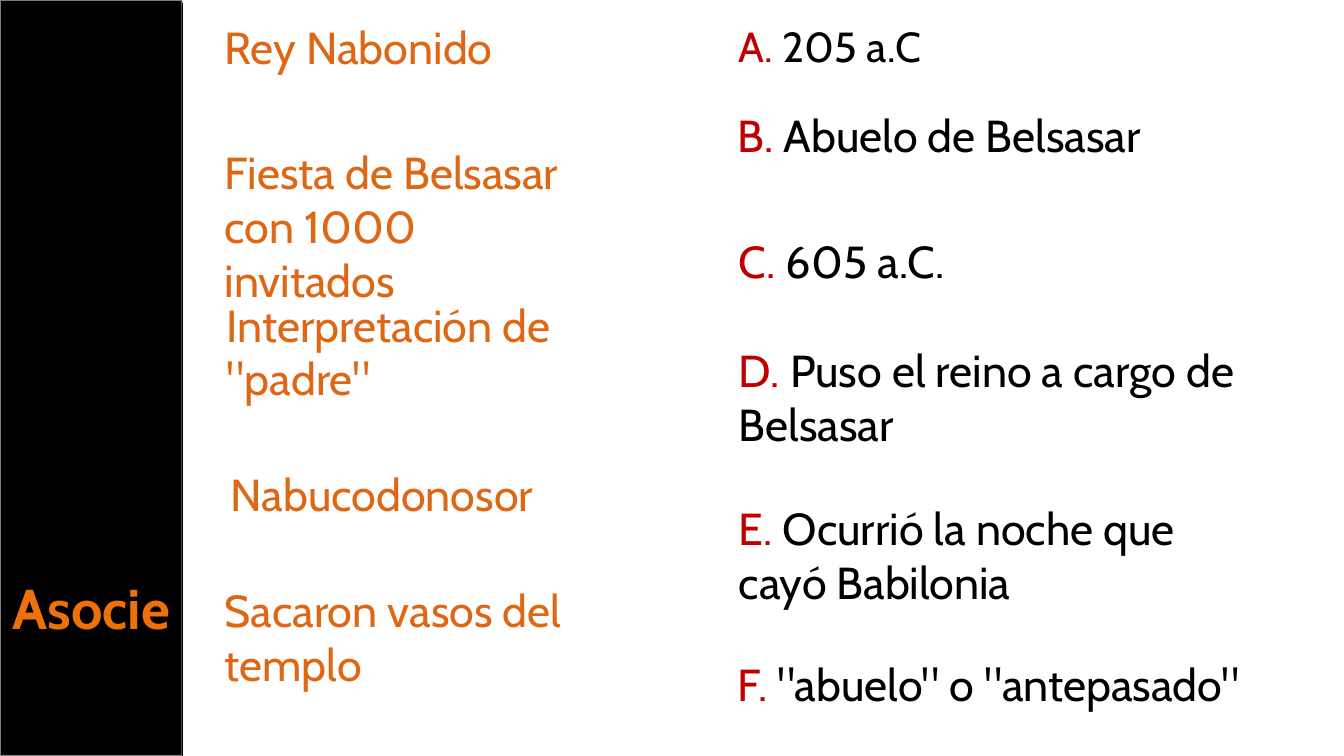
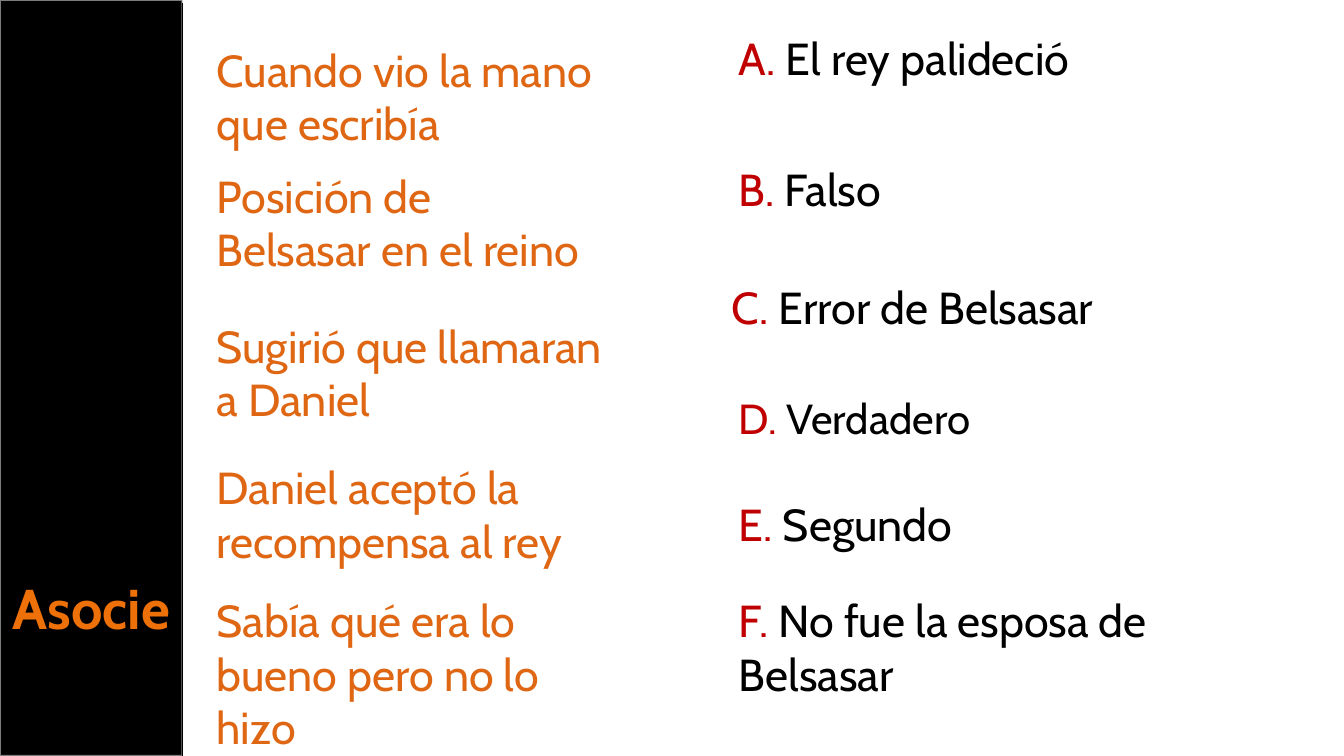
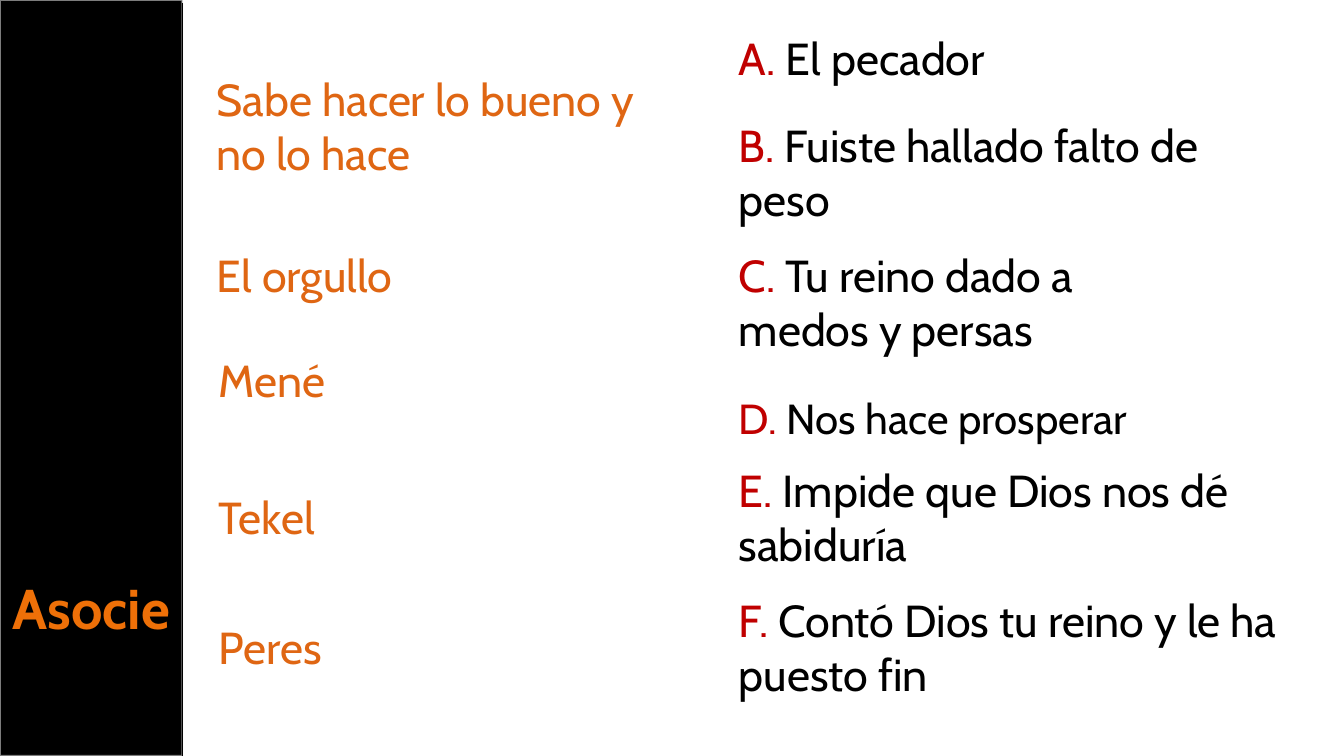
from dataclasses import dataclass

from lxml import etree
from pptx import Presentation
from pptx.dml.color import RGBColor
from pptx.enum.shapes import MSO_CONNECTOR, MSO_SHAPE
from pptx.enum.text import MSO_AUTO_SIZE, PP_ALIGN
from pptx.oxml.ns import qn
from pptx.util import Inches, Pt


@dataclass(frozen=True)
class Theme:
    font: str = "Cabin"
    band: RGBColor = RGBColor(0x00, 0x00, 0x00)
    band_edge: RGBColor = RGBColor(0xF9, 0xF9, 0xF9)
    title: RGBColor = RGBColor(0xEE, 0x70, 0x08)
    prompt: RGBColor = RGBColor(0xDF, 0x66, 0x13)
    letter: RGBColor = RGBColor(0xC0, 0x00, 0x00)
    answer: RGBColor = RGBColor(0x00, 0x00, 0x00)
    title_size: int = 40
    body_size: int = 32
    small_size: int = 30
    line_spacing: float = 1.22


@dataclass(frozen=True)
class Entry:
    """One text of a column; lines is the number of lines its box is sized for."""
    text: str
    left: float
    top: float
    width: float
    lines: int = 1
    size: int = 32


THEME = Theme()
PAGE_WIDTH, PAGE_HEIGHT = 13.33, 7.5
BAND_WIDTH = 1.81
SMALL = THEME.small_size

# Each exercise: prompts on the left, answers (lettered from A) on the right.
EXERCISES = [
    (
        [
            Entry("Rey Nabonido", 2.13, 0.15, 4.59),
            Entry("Fiesta de Belsasar con 1000 invitados", 2.13, 1.39, 3.84, 2),
            Entry('Interpretación de "padre"', 2.15, 2.9, 4.13, 2),
            Entry("Nabucodonosor", 2.19, 4.58, 4.06),
            Entry("Sacaron vasos del templo", 2.13, 5.73, 4.26, 2),
        ],
        [
            Entry("205 a.C", 7.23, 0.15, 4.18, size=SMALL),
            Entry("Abuelo de Belsasar", 7.22, 1.02, 4.92),
            Entry("605 a.C.", 7.23, 2.27, 4.7),
            Entry("Puso el reino a cargo de Belsasar", 7.23, 3.35, 5.51, 2),
            Entry("Ocurrió la noche que cayó Babilonia", 7.23, 4.92, 4.53, 2),
            Entry('"abuelo" o "antepasado"', 7.22, 6.47, 5.59),
        ],
    ),
    (
        [
            Entry("Cuando vio la mano que escribía", 2.05, 0.37, 4.59, 2),
            Entry("Posición de Belsasar en el reino", 2.05, 1.62, 3.84, 2),
            Entry("Sugirió que llamaran a Daniel", 2.05, 3.11, 4.13, 2),
            Entry("Daniel aceptó la recompensa al rey", 2.05, 4.51, 4.39, 2),
            Entry("Sabía qué era lo bueno pero no lo hizo", 2.05, 5.83, 4.26, 2),
        ],
        [
            Entry("El rey palideció", 7.23, 0.26, 3.51),
            Entry("Falso", 7.23, 1.55, 1.89),
            Entry("Error de Belsasar", 7.16, 2.73, 3.91),
            Entry("Verdadero", 7.23, 3.84, 4.18, size=SMALL),
            Entry("Segundo", 7.23, 4.88, 4.53),
            Entry("No fue la esposa de Belsasar", 7.23, 5.83, 5.59, 2),
        ],
    ),
    (
        [
            Entry("Sabe hacer lo bueno y no lo hace", 2.05, 0.66, 4.59, 2),
            Entry("El orgullo", 2.05, 2.41, 3.84),
            Entry("Mené", 2.07, 3.45, 4.13),
            Entry("Tekel", 2.07, 4.81, 4.39),
            Entry("Peres", 2.07, 6.1, 4.26),
        ],
        [
            Entry("El pecador", 7.23, 0.26, 3.51),
            Entry("Fuiste hallado falto de peso", 7.23, 1.12, 4.84, 2),
            Entry("Tu reino dado a medos y persas", 7.23, 2.41, 4.84, 2),
            Entry("Nos hace prosperar", 7.23, 3.84, 4.18, size=SMALL),
            Entry("Impide que Dios nos dé sabiduría", 7.23, 4.54, 5.3, 2),
            Entry("Contó Dios tu reino y le ha puesto fin", 7.23, 5.83, 5.59, 2),
        ],
    ),
]


def add_text(page, entry, spans):
    """Add a box holding one paragraph of (text, colour) spans and return the paragraph."""
    height = 0.1 + entry.lines * entry.size * THEME.line_spacing / 72
    box = page.shapes.add_textbox(
        Inches(entry.left), Inches(entry.top), Inches(entry.width), Inches(height)
    )
    box.text_frame.word_wrap = True
    box.text_frame.auto_size = MSO_AUTO_SIZE.SHAPE_TO_FIT_TEXT
    para = box.text_frame.paragraphs[0]
    para.font.name = THEME.font
    para.font.size = Pt(entry.size)
    for text, color in spans:
        span = para.add_run()
        span.text = text
        span.font.color.rgb = color
    return para


def add_band(page):
    band = page.shapes.add_shape(
        MSO_SHAPE.RECTANGLE, 0, 0, Inches(BAND_WIDTH), Inches(PAGE_HEIGHT)
    )
    band.shadow.inherit = False
    band.fill.solid()
    band.fill.fore_color.rgb = THEME.band
    band.line.color.rgb = THEME.band_edge
    band.line.width = Pt(1.35)
    edge_color = band.line._ln.find(".//" + qn("a:srgbClr"))
    etree.SubElement(edge_color, qn("a:alpha"), val="50000")


def add_title(page):
    entry = Entry("Asocie", 0, 5.64, BAND_WIDTH, size=THEME.title_size)
    para = add_text(page, entry, [(entry.text, THEME.title)])
    para.alignment = PP_ALIGN.CENTER
    para.font.bold = True


def add_band_rule(page):
    rule = page.shapes.add_connector(
        MSO_CONNECTOR.STRAIGHT,
        Inches(BAND_WIDTH), Inches(0.03), Inches(BAND_WIDTH), Inches(PAGE_HEIGHT),
    )
    rule.line.color.rgb = THEME.band
    rule.line.width = Pt(0.85)
    etree.SubElement(rule._element.spPr, qn("a:effectLst"))


def add_exercise(deck, prompts, answers):
    page = deck.slides.add_slide(deck.slide_layouts[6])
    add_band(page)
    for prompt in prompts:
        add_text(page, prompt, [(prompt.text, THEME.prompt)])
    for letter, answer in zip("ABCDEF", answers):
        add_text(page, answer, [(f"{letter}. ", THEME.letter), (answer.text, THEME.answer)])
    add_title(page)
    add_band_rule(page)


def main():
    deck = Presentation()
    deck.slide_width = Inches(PAGE_WIDTH)
    deck.slide_height = Inches(PAGE_HEIGHT)
    for prompts, answers in EXERCISES:
        add_exercise(deck, prompts, answers)
    deck.save("out.pptx")


if __name__ == "__main__":
    main()
